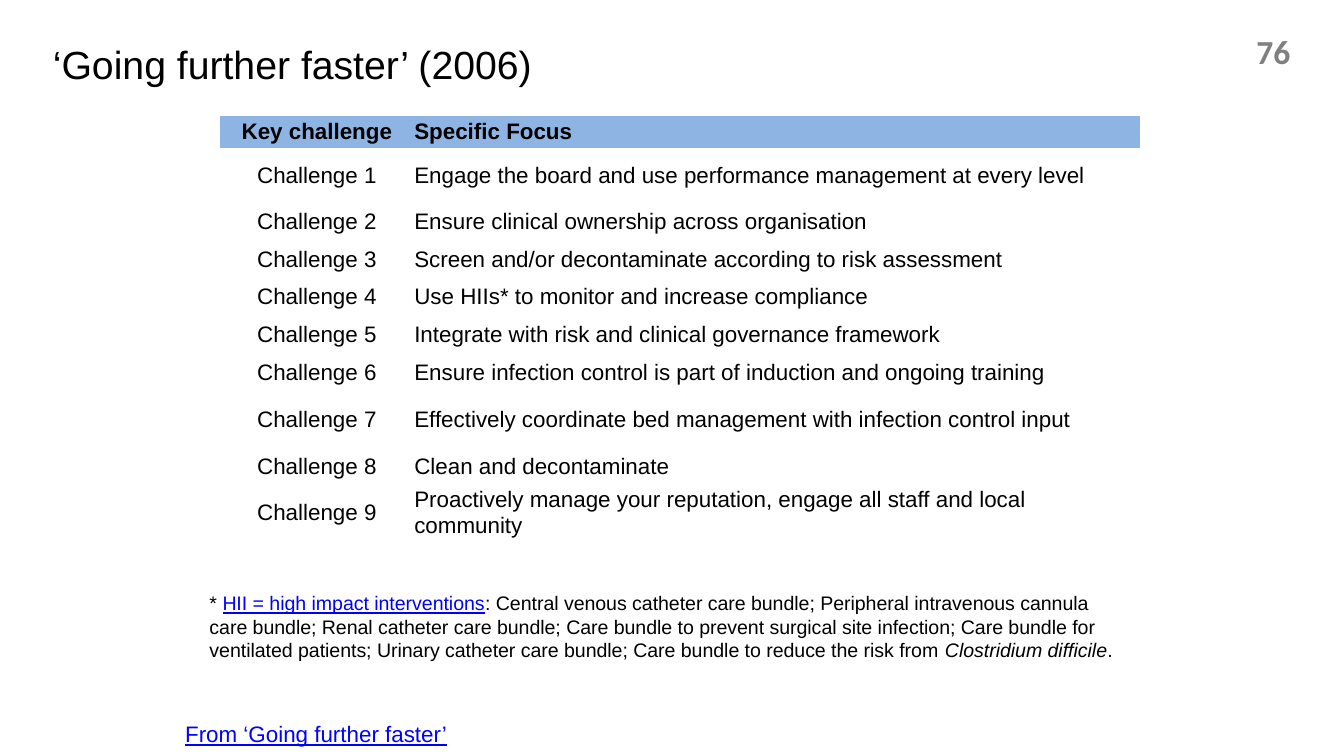
from pptx import Presentation
from pptx import util as u
from pptx.dml import color
from pptx.enum import text

BLACK, BLUE, GREY, HEADER = "000000", "0000FF", "808080", "8EB4E3"
NO_STYLE = "{2D5ABB26-0587-4C30-8999-92F81FD0307C}"


def style(font, size, hex_color, name="Arial", bold=False):
    font.name = name
    font.size = u.Pt(size)
    font.bold = bold
    font.color.rgb = color.RGBColor.from_string(hex_color)


def add_text_box(left, top, width, height, inset=True):
    box = slide.shapes.add_textbox(u.Cm(left), u.Cm(top), u.Cm(width), u.Cm(height))
    frame = box.text_frame
    frame.word_wrap = True
    if not inset:
        frame.margin_left = frame.margin_right = 0
        frame.margin_top = frame.margin_bottom = 0
    return frame


presentation = Presentation()
presentation.slide_width = u.Cm(25.4)
presentation.slide_height = u.Cm(14.29)
slide = presentation.slides.add_slide(presentation.slide_layouts[6])

title = add_text_box(1, 0.76, 23.4, 1.47, inset=False)
title.text = "‘Going further faster’ (2006)"
style(title.paragraphs[0].font, 21, BLACK)

focuses = [
    "Engage the board and use performance management at every level",
    "Ensure clinical ownership across organisation",
    "Screen and/or decontaminate according to risk assessment",
    "Use HIIs* to monitor and increase compliance",
    "Integrate with risk and clinical governance framework",
    "Ensure infection control is part of induction and ongoing training",
    "Effectively coordinate bed management with infection control input",
    "Clean and decontaminate",
    "Proactively manage your reputation, engage all staff and local community",
]
rows = [("Key challenge", "Specific Focus")]
rows += [(f"Challenge {number}", focus) for number, focus in enumerate(focuses, 1)]
row_heights = [0.61, 1.04, 0.71, 0.71, 0.71, 0.71, 0.74, 1.04, 0.71, 1.04]

table_frame = slide.shapes.add_table(
    len(rows), 2, u.Cm(4.15), u.Cm(2.19), u.Cm(17.4), u.Cm(sum(row_heights)))
table = table_frame.table
table.horz_banding = False
table_frame._element.graphic.graphicData.tbl.tblPr[0].text = NO_STYLE
for column, width in zip(table.columns, (3.68, 13.72)):
    column.width = u.Cm(width)

for row_index, (row, height) in enumerate(zip(rows, row_heights)):
    table.rows[row_index].height = u.Cm(height)
    for column_index, wording in enumerate(row):
        cell = table.cell(row_index, column_index)
        cell.text = wording
        cell.vertical_anchor = text.MSO_ANCHOR.MIDDLE
        cell.margin_left = cell.margin_right = cell.margin_top = cell.margin_bottom = 0
        if row_index == 0:
            cell.fill.solid()
            cell.fill.fore_color.rgb = color.RGBColor.from_string(HEADER)
        else:
            cell.fill.background()
        paragraph = cell.text_frame.paragraphs[0]
        style(paragraph.font, 12, BLACK, bold=row_index == 0)
        if column_index == 0:
            paragraph.alignment = text.PP_ALIGN.CENTER

footnote = add_text_box(3.71, 11.05, 17.86, 1.6).paragraphs[0]
footnote_runs = [
    ("* ", BLACK, False, False),
    ("HII = high impact interventions", BLUE, True, False),
    (": Central venous catheter care bundle; Peripheral intravenous cannula care bundle; "
     "Renal catheter care bundle; Care bundle to prevent surgical site infection; "
     "Care bundle for ventilated patients; Urinary catheter care bundle; "
     "Care bundle to reduce the risk from", BLACK, False, False),
    (" Clostridium difficile", BLACK, False, True),
    (".", BLACK, False, False),
]
for wording, hex_color, underline, italic in footnote_runs:
    run = footnote.add_run()
    run.text = wording
    style(run.font, 10.5, hex_color)
    run.font.underline = underline
    run.font.italic = italic

source = add_text_box(3.25, 13.49, 7.95, 0.76)
source.text = "From ‘Going further faster’"
style(source.paragraphs[0].font, 12, BLUE)
source.paragraphs[0].font.underline = True

page_number = add_text_box(18.47, 0.58, 5.92, 0.76, inset=False)
page_number.vertical_anchor = text.MSO_ANCHOR.BOTTOM
page_number.text = "76"
page_number.paragraphs[0].alignment = text.PP_ALIGN.RIGHT
style(page_number.paragraphs[0].font, 18, GREY, name="Calibri", bold=True)

presentation.save("out.pptx")
